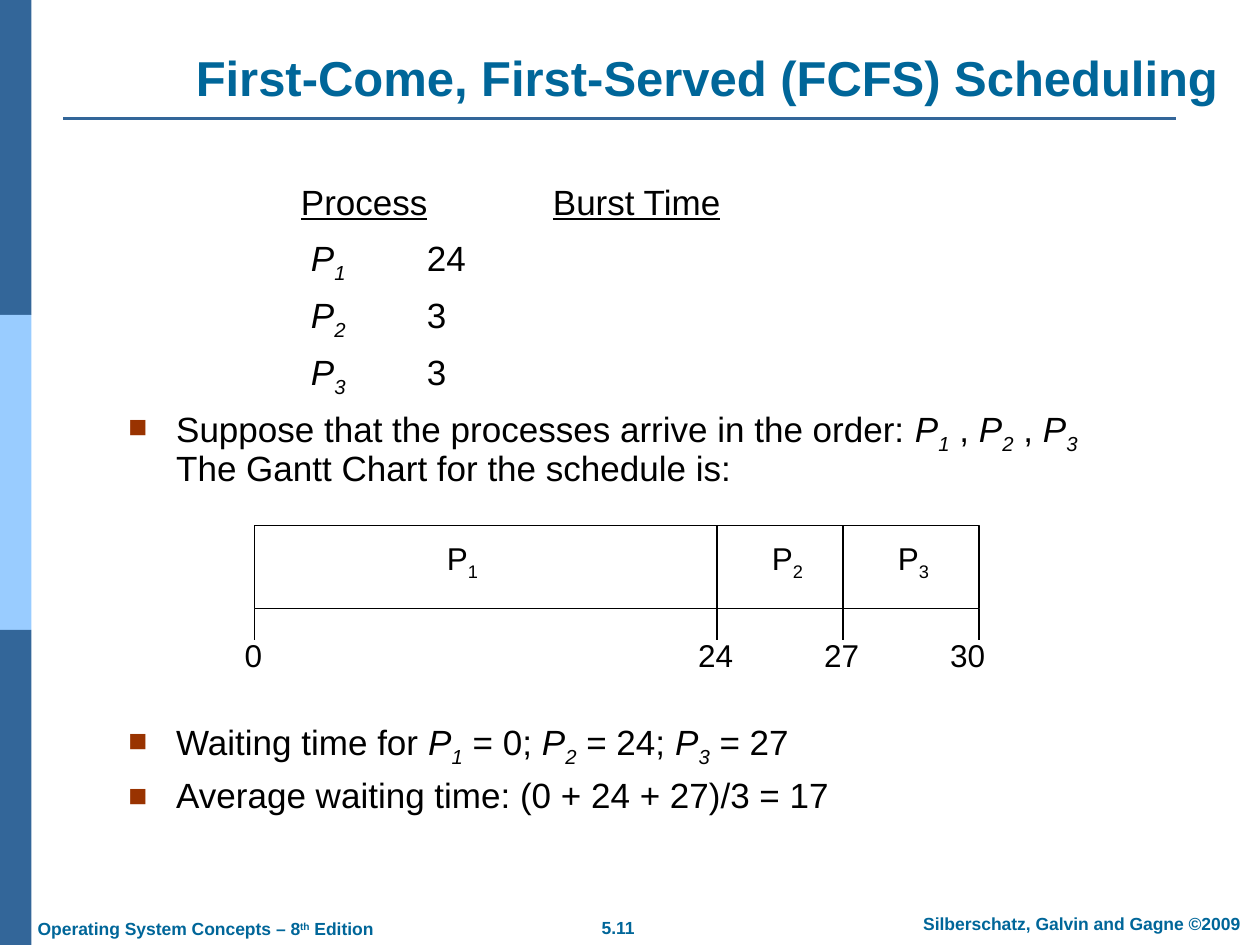
from lxml.etree import SubElement
from pptx import Presentation
from pptx.dml.color import RGBColor
from pptx.enum.shapes import MSO_CONNECTOR, MSO_SHAPE
from pptx.enum.text import MSO_ANCHOR, PP_ALIGN
from pptx.oxml.ns import qn
from pptx.util import Inches, Pt

COLORS = {"ink": "000000", "paper": "FFFFFF", "teal": "006699",
          "navy": "336699", "sky": "99CCFF", "rust": "993300"}
TITLE = "First-Come, First-Served (FCFS) Scheduling"

# Text is cut at "|"; a piece such as P1 is set as a name with a subscript.
HEADS = ["Process", "Burst Time"]
HEAD_TABS = [1.37, 3.37]
ROWS = [("P1", "24"), ("P2", "3"), ("P3", "3")]
ROW_TABS = [1.45, 2.37]
BULLETS = [  # lines, space before in points
    (["Suppose that the processes arrive in the order: |P1| , |P2| , |P3",
      "The Gantt Chart for the schedule is:"], 8),
    (["Waiting time for |P1| = 0; |P2| = 24; |P3| = 27"], 133),
    (["Average waiting time: (0 + 24 + 27)/3 = 17"], 8),
]

TOP, BASE, FOOT = 4.17, 4.83, 5.08
TICKS = [(2.02, "0"), (5.69, "24"), (6.69, "27"), (7.77, "30")]
MARKS = [2.01, 5.68, 6.68, 7.68]
NAMES = [(3.67, "P1"), (6.25, "P2"), (7.25, "P3")]

FOOTERS = [  # left, top, width, align, pieces with raised flag
    (4.66, 7.23, 0.49, PP_ALIGN.CENTER, [("5.11", False)]),
    (7.1, 7.2, 2.97, PP_ALIGN.CENTER,
     [("Silberschatz, Galvin and Gagne ©2009", False)]),
    (0.2, 7.24, 2.88, PP_ALIGN.LEFT,
     [("Operating System Concepts – 8", False), ("th", True),
      (" Edition", False)]),
]

prs = Presentation()
prs.slide_width, prs.slide_height = Inches(10), Inches(7.5)
slide = prs.slides.add_slide(prs.slide_layouts[6])
shapes = slide.shapes


def rgb(name):
    return RGBColor.from_string(COLORS[name])


def add_rect(x, y, w, h, fill, line=None):
    box = shapes.add_shape(MSO_SHAPE.RECTANGLE, Inches(x), Inches(y),
                           Inches(w), Inches(h))
    box.shadow.inherit = False
    box.fill.solid()
    box.fill.fore_color.rgb = rgb(fill)
    if line:
        box.line.color.rgb = rgb(line)
        box.line.width = Pt(0.75)
    else:
        box.line.fill.background()


def add_line(x1, y1, x2, y2, color, width):
    line = shapes.add_connector(MSO_CONNECTOR.STRAIGHT, Inches(x1), Inches(y1),
                                Inches(x2), Inches(y2))
    line.line.color.rgb = rgb(color)
    line.line.width = Pt(width)
    SubElement(line._element.spPr, qn("a:effectLst"))


def add_box(x, y, w, h, anchor=MSO_ANCHOR.TOP, wrap=True):
    frame = shapes.add_textbox(Inches(x), Inches(y), Inches(w),
                               Inches(h)).text_frame
    frame.word_wrap = wrap
    frame.vertical_anchor = anchor
    return frame


def style(para, size, color="ink", bold=False, align=PP_ALIGN.LEFT):
    para.alignment = align
    font = para.font
    font.name, font.size, font.bold = "Arial", Pt(size), bold
    font.color.rgb = rgb(color)


def add_run(para, text, shift=0):
    """Add a run, raised or lowered by a percentage of its size."""
    run = para.add_run()
    run.text = text
    if shift:
        run._r.get_or_add_rPr().set("baseline", str(shift * 1000))
    return run


def add_text(para, text, italic=True):
    for piece in text.split("|"):
        if piece in ("P1", "P2", "P3"):
            runs = add_run(para, piece[0]), add_run(para, piece[1], -25)
            if italic:
                for run in runs:
                    run.font.italic = True
        else:
            add_run(para, piece)


def add_tabs(para, stops):
    tabs = SubElement(para._p.get_or_add_pPr(), qn("a:tabLst"))
    for stop in stops:
        SubElement(tabs, qn("a:tab"), pos=str(Inches(stop)), algn="l")


def add_bullet(para):
    props = para._p.get_or_add_pPr()
    props.set("marL", str(Inches(0.38)))
    props.set("indent", str(-Inches(0.38)))
    SubElement(SubElement(props, qn("a:buClr")), qn("a:srgbClr"),
               val=COLORS["rust"])
    SubElement(props, qn("a:buSzPct"), val="90000")
    SubElement(props, qn("a:buFont"), typeface="Arial")
    SubElement(props, qn("a:buChar"), char="■")


def add_label(x, y, text):
    """Put a Gantt label around the centre x."""
    para = add_box(x - 0.24, y, 0.48, 0.4, MSO_ANCHOR.MIDDLE,
                   False).paragraphs[0]
    style(para, 18, align=PP_ALIGN.CENTER)
    add_text(para, text, italic=False)


# Frame, title and footers
for i, fill in enumerate(["navy", "sky", "navy"]):
    add_rect(0, i * 2.5, 0.25, 2.5, fill)
add_line(0.5, 0.94, 9.33, 0.94, "navy", 1.5)

title = add_box(1.05, 0.39, 9.12, 0.5, MSO_ANCHOR.BOTTOM).paragraphs[0]
title.text = TITLE
style(title, 28, "teal", True, PP_ALIGN.CENTER)

for x, y, w, align, pieces in FOOTERS:
    para = add_box(x, y, w, 0.27, wrap=False).paragraphs[0]
    style(para, 10, "teal", True, align)
    for text, raised in pieces:
        add_run(para, text, 30 if raised else 0)

# Body: process list, then bullets
body = add_box(0.92, 1.42, 8.27, 5.1)


def add_para(gap):
    para = body.add_paragraph()
    para.line_spacing = 0.9
    para.space_before = Pt(gap)
    return para


head = body.paragraphs[0]
head.line_spacing = 0.9
add_tabs(head, HEAD_TABS)
style(head, 20)
for text in HEADS:
    add_run(head, "\t")
    add_run(head, text).font.underline = True

for name, burst in ROWS:
    para = add_para(8)
    add_tabs(para, ROW_TABS)
    style(para, 20)
    add_text(para, f"\t|{name}|\t{burst}")

for lines, gap in BULLETS:
    para = add_para(gap)
    add_bullet(para)
    style(para, 20)
    for i, line in enumerate(lines):
        if i:
            para.add_line_break()
        add_text(para, line)

# Gantt chart
left, right = TICKS[0][0], TICKS[-1][0]
add_rect(left, TOP, right - left, BASE - TOP, "paper", "ink")
for (x, time), mid in zip(TICKS, MARKS):
    add_line(x, BASE if x in (left, right) else TOP, x, FOOT, "ink", 0.75)
    add_label(mid, 5, time)
for x, name in NAMES:
    add_label(x, 4.25, name)

prs.save("out.pptx")
